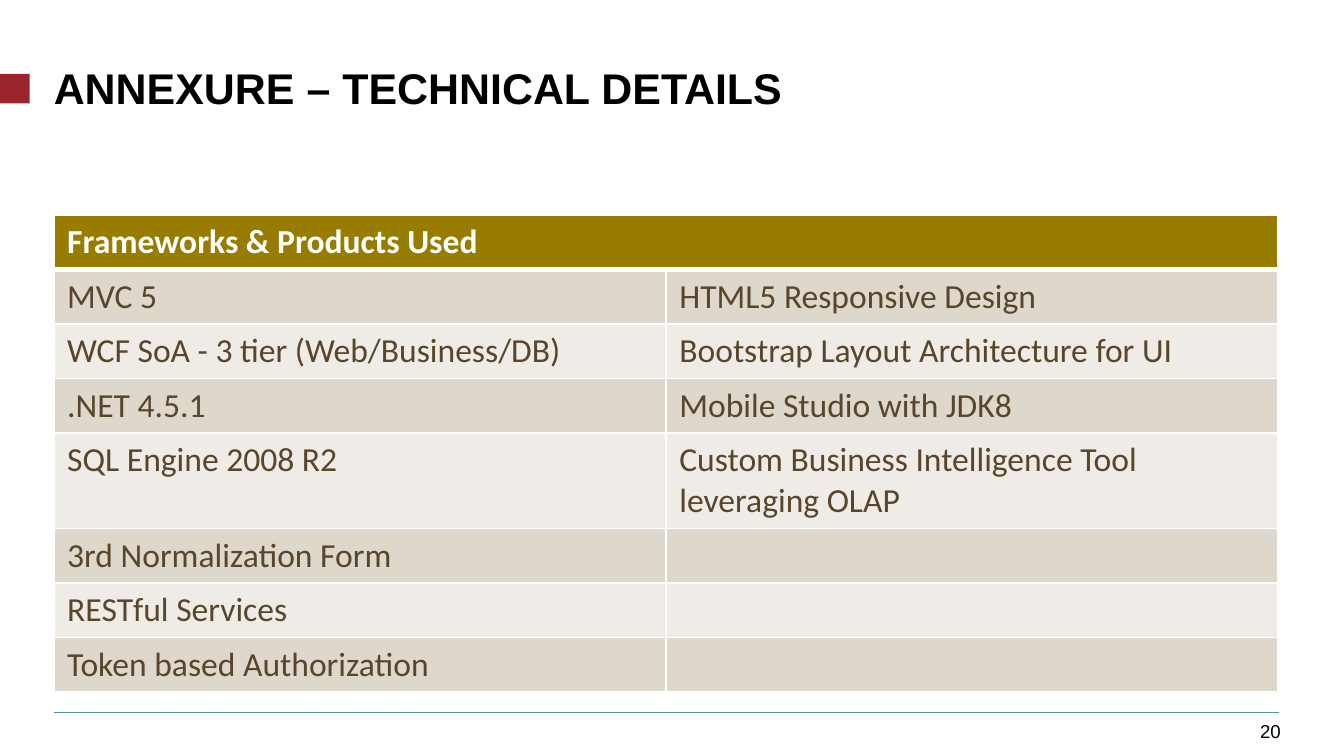
from dataclasses import dataclass

from lxml import etree
from pptx import Presentation
from pptx.dml.color import RGBColor
from pptx.enum.shapes import MSO_CONNECTOR, MSO_SHAPE
from pptx.enum.text import MSO_ANCHOR, MSO_AUTO_SIZE, PP_ALIGN
from pptx.oxml.ns import qn
from pptx.util import Inches, Pt

RECT = MSO_SHAPE.RECTANGLE
LINE = MSO_CONNECTOR.STRAIGHT
TOP, BASE = MSO_ANCHOR.TOP, MSO_ANCHOR.BOTTOM
LEFT, RIGHT = PP_ALIGN.LEFT, PP_ALIGN.RIGHT
FIXED = MSO_AUTO_SIZE.NONE
TITLE_ONLY = 5


@dataclass(frozen=True)
class Theme:
    head_font: str = "Arial"
    body_font: str = "Calibri"
    title_size: int = 23
    body_size: int = 18
    note_size: int = 10
    black: str = "000000"
    white: str = "FFFFFF"
    red: str = "9B242D"
    blue: str = "5393AB"
    gold: str = "977C00"
    brown: str = "59452A"
    bands: tuple = ("DDD7CC", "EFECE7")


def paint(fill, color):
    fill.solid()
    fill.fore_color.rgb = RGBColor.from_string(color)


def write(frame, text, font, size, color, bold=False, align=LEFT, lead=None):
    """Fill the first paragraph; lead is a fixed line height in points."""
    para = frame.paragraphs[0]
    para.alignment = align
    if lead:
        para.line_spacing = Pt(lead)
        para.space_before = Pt(0)
    run = para.add_run()
    run.text = text
    run.font.name = font
    run.font.size = Pt(size)
    run.font.bold = bold
    run.font.color.rgb = RGBColor.from_string(color)


def fit(frame, anchor):
    """Remove the margins and hold the box at its size."""
    frame.margin_left = frame.margin_right = 0
    frame.margin_top = frame.margin_bottom = 0
    frame.auto_size = FIXED
    frame.word_wrap = True
    frame.vertical_anchor = anchor


def edge(cell, color, top, base):
    """Draw the cell borders; side borders are one point wide."""
    props = cell._tc.get_or_add_tcPr()
    for side, width in zip("LRTB", (1, 1, top, base)):
        line = etree.SubElement(props, qn(f"a:ln{side}"), w=str(Pt(width)))
        fill = etree.SubElement(line, qn("a:solidFill"))
        etree.SubElement(fill, qn("a:srgbClr"), val=color)


class Page:
    def __init__(self, slide, theme):
        self.slide = slide
        self.shapes = slide.shapes
        self.theme = theme

    def title(self, text, *box):
        t = self.theme
        shape = self.shapes.title
        shape.left, shape.top, shape.width, shape.height = map(Inches, box)
        fit(shape.text_frame, TOP)
        write(shape.text_frame, text, t.head_font, t.title_size, t.black,
              bold=True, lead=t.title_size)

    def block(self, color, *box):
        shape = self.shapes.add_shape(RECT, *map(Inches, box))
        shape.shadow.inherit = False
        paint(shape.fill, color)
        shape.line.fill.background()

    def rule(self, color, width, *ends):
        line = self.shapes.add_connector(LINE, *map(Inches, ends))
        line.line.color.rgb = RGBColor.from_string(color)
        line.line.width = Pt(width)
        etree.SubElement(line._element.spPr, qn("a:effectLst"))

    def number(self, text, *box):
        t = self.theme
        frame = self.shapes.add_textbox(*map(Inches, box)).text_frame
        fit(frame, BASE)
        write(frame, text, t.head_font, t.note_size, t.black, align=RIGHT)

    def table(self, head, rows, *box):
        """Place a merged heading over banded rows."""
        t = self.theme
        data = [(head, ""), *rows]
        grid = self.shapes.add_table(len(data), 2, *map(Inches, box)).table
        for r, texts in enumerate(data):
            for c, text in enumerate(texts):
                cell = grid.cell(r, c)
                edge(cell, t.white, 3 if r == 1 else 1, 3 if r == 0 else 1)
                paint(cell.fill, t.bands[(r - 1) % 2] if r else t.gold)
                if text:
                    write(cell.text_frame, text, t.body_font, t.body_size,
                          t.brown if r else t.white, bold=r == 0)
        grid.cell(0, 0).merge(grid.cell(0, 1))


ROWS = [
    ("MVC 5", "HTML5 Responsive Design"),
    ("WCF SoA - 3 tier (Web/Business/DB)",
     "Bootstrap Layout Architecture for UI"),
    (".NET 4.5.1", "Mobile Studio with JDK8"),
    ("SQL Engine 2008 R2",
     "Custom Business Intelligence Tool leveraging OLAP"),
    ("3rd Normalization Form", ""),
    ("RESTful Services", ""),
    ("Token based Authorization", ""),
]


def main():
    deck = Presentation()
    deck.slide_width = Inches(10)
    deck.slide_height = deck.slide_width * 9 // 16
    slide = deck.slides.add_slide(deck.slide_layouts[TITLE_ONLY])
    theme = Theme()
    page = Page(slide, theme)
    page.block(theme.red, 0, 0.55, 0.22, 0.22)
    page.rule(theme.blue, 0.5, 0.4, 5.3, 9.52, 5.3)
    page.number("20", 9.32, 5.35, 0.21, 0.17)
    page.title("ANNEXURE – TECHNICAL DETAILS", 0.4, 0.52, 9.11, 0.42)
    page.table("Frameworks & Products Used", ROWS, 0.4, 1.6, 9.11, 3.24)
    deck.save("out.pptx")


if __name__ == "__main__":
    main()
